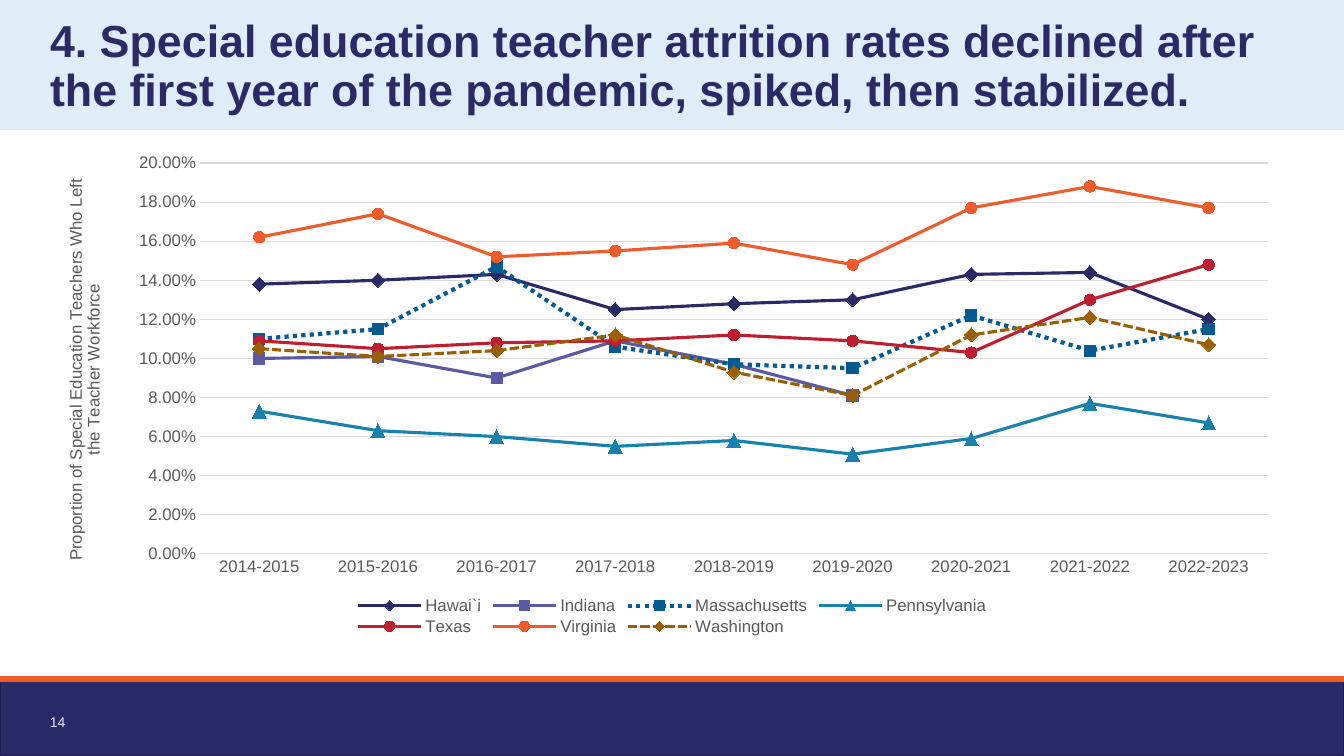
import pptx
import pptx.chart.data
import pptx.dml.color
import pptx.enum.chart
import pptx.enum.dml
import pptx.enum.shapes
import pptx.enum.text
import pptx.oxml
import pptx.oxml.ns
import pptx.util
from dataclasses import dataclass

# Content
HEADLINE = ("4. Special education teacher attrition rates declined after "
            "the first year of the pandemic, spiked, then stabilized.")
PAGE = "14"
AXIS_LABEL = "Proportion of Special Education Teachers Who Left the Teacher Workforce"
YEARS = [f"{year}-{year + 1}" for year in range(2014, 2023)]
# state: (yearly rates, colour, marker, marker size, dash, line width)
STATES = {
    "Hawai`i": ([0.138, 0.14, 0.143, 0.125, 0.128, 0.13, 0.143, 0.144, 0.12],
                "292A67", "DIAMOND", 10, None, 2.25),
    "Indiana": ([0.1, 0.101, 0.09, 0.109, 0.097, 0.081, None, None, None],
                "5B59A3", "SQUARE", 8, None, 2.25),
    "Massachusetts": ([0.11, 0.115, 0.147, 0.106, 0.097, 0.095, 0.122, 0.104, 0.115],
                      "035B91", "SQUARE", 8, "ROUND_DOT", 3),
    "Pennsylvania": ([0.073, 0.063, 0.06, 0.055, 0.058, 0.051, 0.059, 0.077, 0.067],
                     "1882AE", "TRIANGLE", 10, None, 2.25),
    "Texas": ([0.109, 0.105, 0.108, 0.109, 0.112, 0.109, 0.103, 0.13, 0.148],
              "BE1E2D", "CIRCLE", 8, None, 2.25),
    "Virginia": ([0.162, 0.174, 0.152, 0.155, 0.159, 0.148, 0.177, 0.188, 0.177],
                 "F15A29", "CIRCLE", 8, None, 2.25),
    "Washington": ([0.105, 0.101, 0.104, 0.112, 0.093, 0.081, 0.112, 0.121, 0.107],
                   "9A5E03", "DIAMOND", 10, "SQUARE_DOT", 2.25),
}


@dataclass(frozen=True)
class Theme:
    font: str = "Arial"
    navy: str = "292A67"
    navy_edge: str = "1E1F4C"
    pale: str = "DFEDF9"
    orange: str = "F15A29"
    gray: str = "595959"
    grid: str = "D9D9D9"
    white: str = "FFFFFF"
    title_size: int = 32
    chart_size: int = 12
    page_size: int = 10


THEME = Theme()

# Places in px: left, top, width, height
SLIDE_W, SLIDE_H = 1344, 756
FOOTER_TOP = 679
HEADER_BOX = (0, 0, SLIDE_W, 130)
FOOTER_BOX = (0, FOOTER_TOP, SLIDE_W, SLIDE_H - FOOTER_TOP)
TITLE_BOX = (50, 10, 1243, 106)
CHART_BOX = (50, 144, 1243, 496)
PLOT_BOX = (200, 163, 1068, 391)
LEGEND_BOX = (352, 594, 640, 44)
AXIS_LABEL_BOX = (62, 176, 36, 382)
PAGE_BOX = (50, 708, 27, 27)
EMU_PER_PX = 914400 / 100.8


def emu(*lengths):
    return [pptx.util.Emu(round(length * EMU_PER_PX)) for length in lengths]


def rgb(code):
    return pptx.dml.color.RGBColor.from_string(code)


def style(font, size, color, bold=False):
    font.name, font.size, font.bold = THEME.font, pptx.util.Pt(size), bold
    font.color.rgb = rgb(color)


def stroke(line, color, width):
    line.color.rgb = rgb(color)
    line.width = pptx.util.Pt(width)


def band(box, color):
    shape = slide.shapes.add_shape(pptx.enum.shapes.MSO_SHAPE.RECTANGLE, *emu(*box))
    shape.shadow.inherit = False
    shape.fill.solid()
    shape.fill.fore_color.rgb = rgb(color)
    shape.line.fill.background()
    return shape


def place(element, box, after=None, inner=False):
    """Give a chart part a manual layout, as fractions of the chart."""
    for old in element.findall(pptx.oxml.ns.qn("c:layout")):
        element.remove(old)
    left, top, width, height = box
    chart_left, chart_top, chart_w, chart_h = CHART_BOX
    settings = [("layoutTarget", "inner")] if inner else []
    settings += [("xMode", "edge"), ("yMode", "edge"),
                 ("x", round((left - chart_left) / chart_w, 4)),
                 ("y", round((top - chart_top) / chart_h, 4)),
                 ("w", round(width / chart_w, 4)),
                 ("h", round(height / chart_h, 4))]
    body = "".join(f'<c:{tag} val="{value}"/>' for tag, value in settings)
    layout = pptx.oxml.parse_xml(
        f'<c:layout {pptx.oxml.ns.nsdecls("c")}><c:manualLayout>{body}'
        '</c:manualLayout></c:layout>')
    if after:
        element.find(pptx.oxml.ns.qn(after)).addnext(layout)
    else:
        element.insert(0, layout)


deck = pptx.Presentation()
deck.slide_width, deck.slide_height = emu(SLIDE_W, SLIDE_H)
slide = deck.slides.add_slide(deck.slide_layouts[5])

# Header and footer bands
stroke(band(FOOTER_BOX, THEME.navy).line, THEME.navy_edge, 1)
band(HEADER_BOX, THEME.pale)
rule = slide.shapes.add_connector(pptx.enum.shapes.MSO_CONNECTOR.STRAIGHT,
                                  *emu(0, FOOTER_TOP, SLIDE_W, FOOTER_TOP))
stroke(rule.line, THEME.orange, 4.5)
rule.element.spPr.append(pptx.oxml.parse_xml(
    f'<a:effectLst {pptx.oxml.ns.nsdecls("a")}/>'))

# Title, brought in front of the header band
headline = slide.shapes.title
headline.element.getparent().append(headline.element)
headline.left, headline.top, headline.width, headline.height = emu(*TITLE_BOX)
frame = headline.text_frame
frame.text = HEADLINE
frame.word_wrap = True
frame.auto_size = pptx.enum.text.MSO_AUTO_SIZE.NONE
frame.vertical_anchor = pptx.enum.text.MSO_ANCHOR.BOTTOM
frame.margin_left = frame.margin_right = frame.margin_top = frame.margin_bottom = 0
frame.paragraphs[0].alignment = pptx.enum.text.PP_ALIGN.LEFT
frame.paragraphs[0].line_spacing = 0.9
style(frame.paragraphs[0].runs[0].font, THEME.title_size, THEME.navy, True)

# Chart
rates = pptx.chart.data.CategoryChartData(number_format="0.00%")
rates.categories = YEARS
for state, (values, *_) in STATES.items():
    rates.add_series(state, values)
chart = slide.shapes.add_chart(pptx.enum.chart.XL_CHART_TYPE.LINE_MARKERS,
                               *emu(*CHART_BOX), rates).chart
chart.has_title = False
style(chart.font, THEME.chart_size, THEME.gray)
chart.plots[0].vary_by_categories = False
place(chart.plots[0]._element.getparent(), PLOT_BOX, inner=True)

for series, (_, color, marker, size, dash, width) in zip(chart.plots[0].series,
                                                         STATES.values()):
    series.smooth = False
    stroke(series.format.line, color, width)
    if dash:
        series.format.line.dash_style = pptx.enum.dml.MSO_LINE[dash]
    series.marker.style = pptx.enum.chart.XL_MARKER_STYLE[marker]
    series.marker.size = size
    series.marker.format.fill.solid()
    series.marker.format.fill.fore_color.rgb = rgb(color)
    stroke(series.marker.format.line, color, 0.75)

# Axes
year_axis, rate_axis = chart.category_axis, chart.value_axis
for axis in (year_axis, rate_axis):
    axis.major_tick_mark = axis.minor_tick_mark = pptx.enum.chart.XL_TICK_MARK.NONE
    style(axis.tick_labels.font, THEME.chart_size, THEME.gray)
stroke(year_axis.format.line, THEME.grid, 0.75)
rate_axis.format.line.fill.background()
rate_axis.minimum_scale, rate_axis.maximum_scale, rate_axis.major_unit = 0, 0.2, 0.02
rate_axis.tick_labels.number_format = "0.00%"
rate_axis.tick_labels.number_format_is_linked = False
stroke(rate_axis.major_gridlines.format.line, THEME.grid, 0.75)
axis_title = rate_axis.axis_title
axis_title.text_frame.text = AXIS_LABEL
style(axis_title.text_frame.paragraphs[0].runs[0].font, THEME.chart_size, THEME.gray)
place(axis_title._element, AXIS_LABEL_BOX, after="c:tx")

# Legend
chart.has_legend = True
chart.legend.position = pptx.enum.chart.XL_LEGEND_POSITION.BOTTOM
chart.legend.include_in_layout = False
style(chart.legend.font, THEME.chart_size, THEME.gray)
place(chart.legend._element, LEGEND_BOX, after="c:legendPos")

# Page number
page = slide.shapes.add_textbox(*emu(*PAGE_BOX)).text_frame
page.text = PAGE
page.word_wrap = False
page.vertical_anchor = pptx.enum.text.MSO_ANCHOR.BOTTOM
page.margin_left = page.margin_right = 0
style(page.paragraphs[0].runs[0].font, THEME.page_size, THEME.pale)

deck.save("out.pptx")
